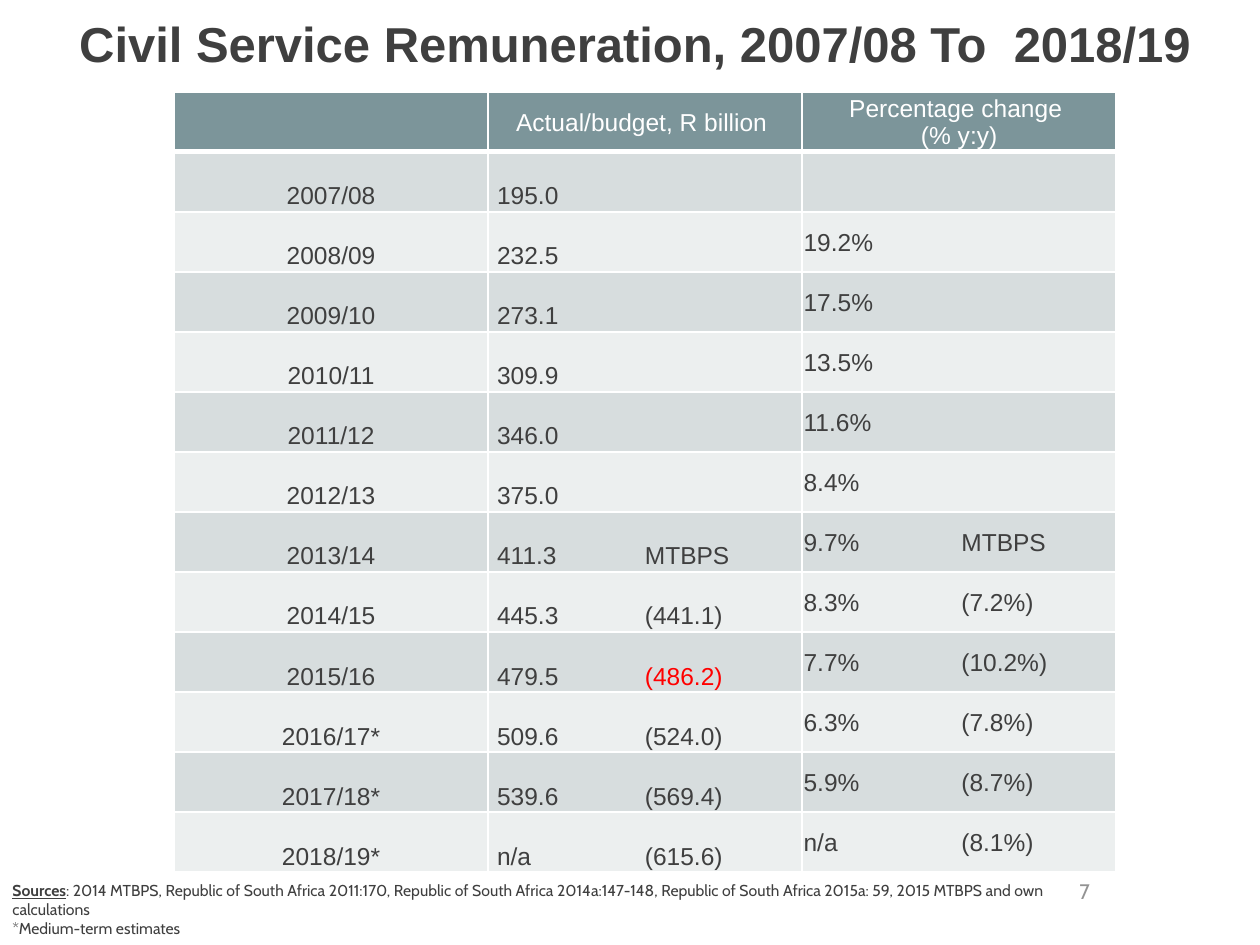
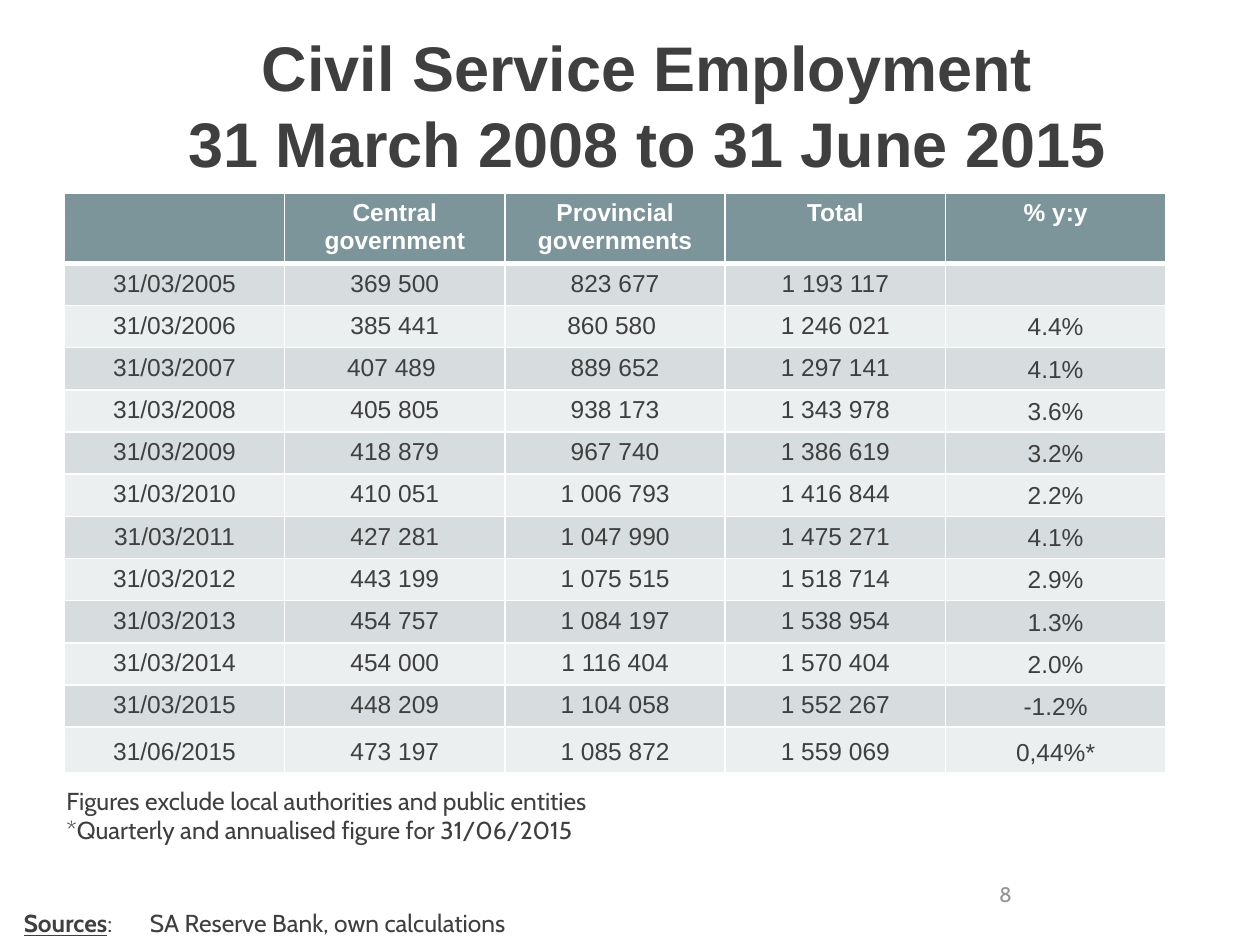
from dataclasses import dataclass

from lxml import etree
from pptx import Presentation
from pptx import util as u
from pptx.dml.color import RGBColor
from pptx.enum import text
from pptx.oxml import ns

CENTER, LEFT = text.PP_ALIGN.CENTER, text.PP_ALIGN.LEFT
TOP, MIDDLE = text.MSO_ANCHOR.TOP, text.MSO_ANCHOR.MIDDLE


@dataclass(frozen=True)
class Theme:
    heading_font: str = "Arial"
    note_font: str = "Cabin"
    ink: str = "3F3F3F"
    white: str = "FFFFFF"
    red: str = "FF0000"
    grey: str = "939393"
    header: str = "7C959A"
    bands: tuple = ("D7DDDE", "ECEFEF")
    body_size: float = 14
    number_size: float = 12
    small_size: float = 9
    thin: float = 1
    thick: float = 3


@dataclass(frozen=True)
class Column:
    align: object = CENTER
    anchor: object = TOP
    margins: tuple = (0.25, 0.13, 0.25, 0.13)  # left, top, right, bottom in cm
    spacing: float = 1
    tab: float = 0


THEME = Theme()


def write(para, words, *, size=THEME.body_size, color=THEME.ink, font=THEME.heading_font,
          bold=False, underline=False, align=LEFT, spacing=1.0, tab=0.0):
    """Add words to a paragraph; a newline becomes a line break."""
    para.alignment = align
    para.line_spacing = spacing
    props = para._p.get_or_add_pPr()
    if tab and props.find(ns.qn("a:tabLst")) is None:
        stops = etree.SubElement(props, ns.qn("a:tabLst"))
        etree.SubElement(stops, ns.qn("a:tab"), pos=str(u.Cm(tab)), algn="l")
    if not words:
        etree.SubElement(para._p, ns.qn("a:endParaRPr"), sz=str(int(size * 100)))
        return
    for index, line in enumerate(words.split("\n")):
        if index:
            para.add_line_break()
        span = para.add_run()
        span.text = line
        span.font.name = font
        span.font.size = u.Pt(size)
        span.font.bold = bold
        span.font.underline = underline
        span.font.color.rgb = RGBColor.from_string(color)


def add_note(page, place, paragraphs):
    """Add a text box; each paragraph is a list of (words, format) pairs."""
    box = page.shapes.add_textbox(*(u.Cm(length) for length in place))
    box.text_frame.word_wrap = True
    for index, parts in enumerate(paragraphs):
        para = box.text_frame.add_paragraph() if index else box.text_frame.paragraphs[0]
        for words, style in parts:
            write(para, words, **{"font": THEME.note_font, **style})
    return box


# Remuneration: year, budget and change, with the MTBPS figure after a tab
narrow, tight = (0.18, 0.03, 0.18, 0), (0.03, 0.03, 0.03, 0)
remuneration = [
    ("", "Actual/budget, R billion ", "Percentage change \n(% y:y)"),
    ("2007/08", "195.0", ""),
    ("2008/09", "232.5", "19.2%"),
    ("2009/10", "273.1", "17.5%"),
    ("2010/11", "309.9", "13.5%"),
    ("2011/12", "346.0", "11.6%"),
    ("2012/13", "375.0", "8.4%"),
    ("2013/14", "411.3\tMTBPS", "9.7%\tMTBPS"),
    ("2014/15", "445.3\t(441.1)", "8.3%\t(7.2%)"),
    ("2015/16", "479.5\t(486.2)", "7.7%\t(10.2%)"),
    ("2016/17*", "509.6\t(524.0)", "6.3%\t(7.8%)"),
    ("2017/18*", "539.6\t(569.4)", "5.9%\t(8.7%)"),
    ("2018/19*", "n/a\t(615.6)", "n/a\t(8.1%)"),
]

# Employment: date, central, provincial, total and change
employment = [
    ("", "Central\ngovernment", "Provincial\ngovernments", "Total", "% y:y"),
    ("31/03/2005", "369 500", "823 677", "1 193 117", ""),
    ("31/03/2006", "385 441", "860 580 ", "1 246 021", "4.4%"),
    ("31/03/2007", "407 489 ", "889 652", "1 297 141", "4.1%"),
    ("31/03/2008", "405 805", "938 173", "1 343 978", "3.6%"),
    ("31/03/2009", "418 879", "967 740", "1 386 619", "3.2%"),
    ("31/03/2010", "410 051", "1 006 793", "1 416 844", "2.2%"),
    ("31/03/2011", "427 281", "1 047 990", "1 475 271", "4.1%"),
    ("31/03/2012", "443 199", "1 075 515", "1 518 714", "2.9%"),
    ("31/03/2013", "454 757", "1 084 197", "1 538 954", "1.3%"),
    ("31/03/2014", "454 000", "1 116 404", "1 570 404", "2.0%"),
    ("31/03/2015", "448 209", "1 104 058", "1 552 267", "-1.2%"),
    ("31/06/2015", "473 197", "1 085 872", "1 559 069", "0,44%*"),
]

# Content of each page
small = {"size": THEME.small_size}
label = {"bold": True, "underline": True}
pages = [
    {
        "title": "Civil Service Remuneration, 2007/08 To  2018/19",
        "title_size": 28,
        "title_place": (0.2, 0.03, 25.2, 5.49),
        "rows": remuneration,
        "table_at": (3.51, 1.85),
        "column_width": 6.33,
        "heights": [1.21] * 13,
        "columns": [
            Column(CENTER, MIDDLE, narrow, 2),
            Column(LEFT, MIDDLE, narrow, 2, 2.98),
            Column(LEFT, MIDDLE, tight, 1, 3.18),
        ],
        "header": Column(CENTER, MIDDLE, narrow),
        "header_bold": False,
        "last_spacing": None,
        "notes": [((0, 17.63, 22.1, 1.4), [
            [("Sources", {**small, **label}),
             (": 2014 MTBPS, Republic of South Africa 2011:170, Republic of South Africa "
              "2014a:147-148, Republic of South Africa 2015a: 59, 2015 MTBPS and own "
              "calculations", small)],
            [("*Medium-term estimates", small)],
        ])],
        "number": "7",
        "number_at": (21.51, 17.58),
    },
    {
        "title": "Civil Service Employment\n31 March 2008 to 31 June 2015",
        "title_size": 36,
        "title_place": (0.74, 0.33, 24.61, 5.49),
        "rows": employment,
        "table_at": (1.3, 3.89),
        "column_width": 4.44,
        "heights": [1.42] + [0.85] * 11 + [0.91],
        "columns": [Column()] * 4 + [Column(CENTER, MIDDLE, tight)],
        "header": Column(),
        "header_bold": True,
        "last_spacing": 1.15,
        "notes": [
            ((0.23, 18.19, 21.6, 0.86), [
                [("Sources", label), (":\tSA Reserve Bank, own calculations", {})]]),
            ((1.09, 15.72, 22.4, 1.8), [
                [("Figures exclude local authorities and public entities", {})],
                [("*Quarterly and annualised figure for 31/06/2015", {})]]),
        ],
        "number": "8",
        "number_at": (19.89, 17.65),
    },
]

deck = Presentation()
deck.slide_width, deck.slide_height = u.Cm(25.4), u.Cm(19.05)

for content in pages:
    page = deck.slides.add_slide(deck.slide_layouts[5])

    # Title
    title = page.shapes.title
    title.left, title.top, title.width, title.height = map(u.Cm, content["title_place"])
    frame = title.text_frame
    frame.word_wrap = True
    frame.auto_size = text.MSO_AUTO_SIZE.NONE
    frame.vertical_anchor = TOP
    frame.margin_top = u.Cm(0.25)
    write(frame.paragraphs[0], content["title"], size=content["title_size"],
          bold=True, align=CENTER)

    # Table grid
    rows, columns, heights = content["rows"], content["columns"], content["heights"]
    width = content["column_width"]
    left, top = content["table_at"]
    table = page.shapes.add_table(
        len(rows), len(columns), u.Cm(left), u.Cm(top),
        u.Cm(width * len(columns)), u.Cm(sum(heights))).table
    for grid_column in table.columns:
        grid_column.width = u.Cm(width)
    for grid_row, height in zip(table.rows, heights):
        grid_row.height = u.Cm(height)

    # Table cells
    for r, values in enumerate(rows):
        for c, value in enumerate(values):
            cell = table.cell(r, c)
            column = content["header"] if r == 0 else columns[c]
            cell.vertical_anchor = column.anchor
            (cell.margin_left, cell.margin_top,
             cell.margin_right, cell.margin_bottom) = map(u.Cm, column.margins)
            cell.fill.solid()
            fill = THEME.bands[(r - 1) % 2] if r else THEME.header
            cell.fill.fore_color.rgb = RGBColor.from_string(fill)

            # White rules, heavier below the header
            heavy_side = {0: "lnB", 1: "lnT"}.get(r)
            for place, side in enumerate(("lnL", "lnR", "lnT", "lnB")):
                weight = THEME.thick if side == heavy_side else THEME.thin
                line = etree.Element(ns.qn(f"a:{side}"), w=str(u.Pt(weight)))
                paint = etree.SubElement(line, ns.qn("a:solidFill"))
                etree.SubElement(paint, ns.qn("a:srgbClr"), val=THEME.white)
                cell._tc.get_or_add_tcPr().insert(place, line)

            # Values, with the revised budget figure in red
            spacing = column.spacing
            if r == len(rows) - 1 and content["last_spacing"]:
                spacing = content["last_spacing"]
            style = {"align": column.align, "spacing": spacing, "tab": column.tab,
                     "color": THEME.ink if r else THEME.white,
                     "bold": r == 0 and content["header_bold"]}
            para = cell.text_frame.paragraphs[0]
            before, revised, _ = value.partition("(486.2)")
            write(para, before, **style)
            if revised:
                write(para, revised, **{**style, "color": THEME.red})

    # Notes and page number
    for place, paragraphs in content["notes"]:
        add_note(page, place, paragraphs)
    add_note(page, (*content["number_at"], 3.15, 1.02), [
        [(content["number"], {"size": THEME.number_size, "color": THEME.grey})]])

deck.save("out.pptx")
